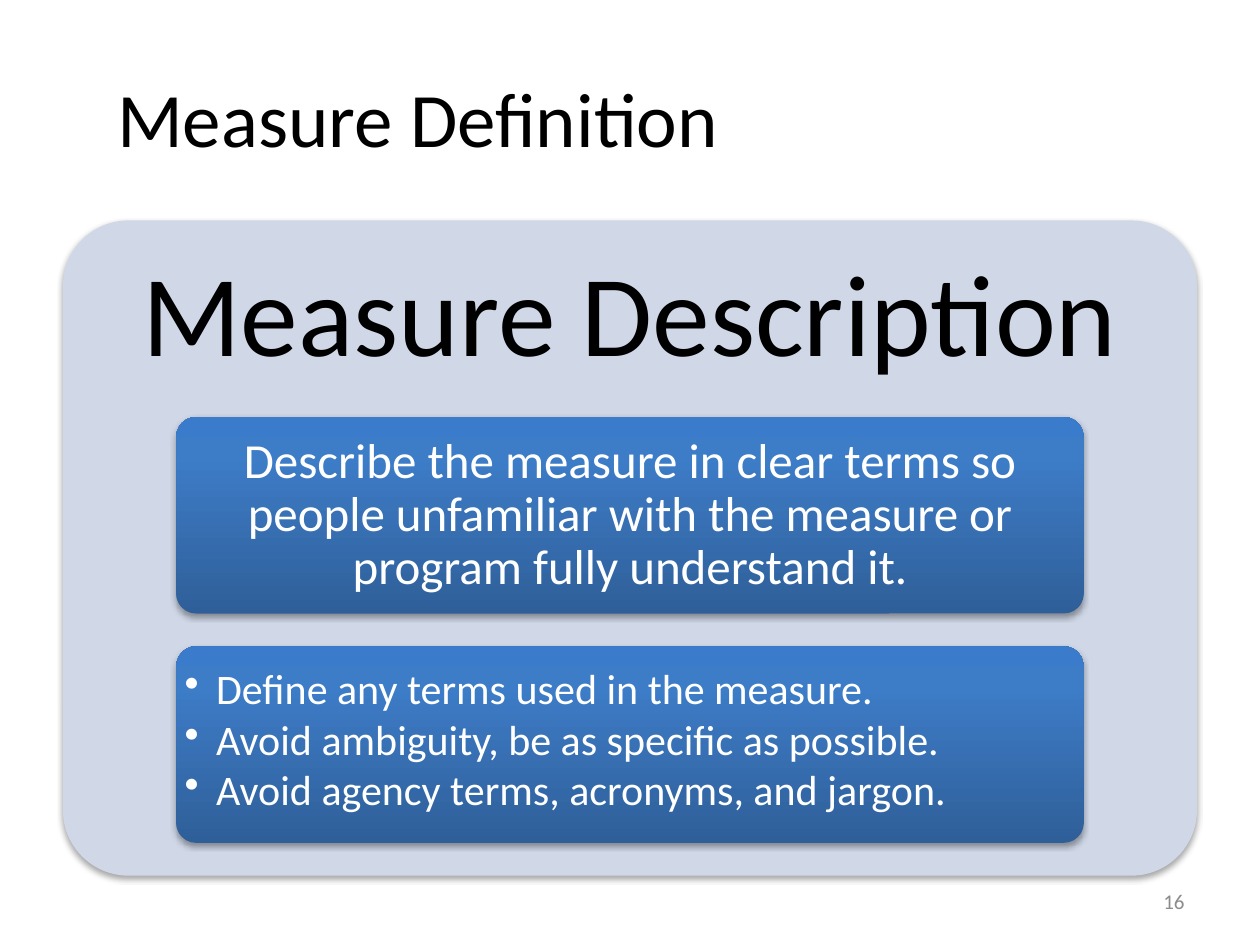
from dataclasses import dataclass

import pptx
import pptx.dml.color
import pptx.enum.shapes
import pptx.enum.text
import pptx.oxml
import pptx.oxml.ns
import pptx.util
from lxml import etree

Inches = pptx.util.Inches
Pt = pptx.util.Pt
ALIGN = pptx.enum.text.PP_ALIGN
ANCHOR = pptx.enum.text.MSO_ANCHOR
NAMESPACE = pptx.oxml.ns.nsdecls("a")


@dataclass(frozen=True)
class Theme:
    font: str = "Calibri"
    ink: str = "000000"
    light: str = "FFFFFF"
    muted: str = "8C8C8C"
    panel: str = "D0D8E8"
    card_stops: tuple = ((0, "2F5F99"), (80, "3D7CC7"), (100, "3A7CCB"))
    title_size: int = 44
    heading_size: int = 66
    card_size: int = 28
    bullet_size: int = 24
    number_size: int = 12


@dataclass(frozen=True)
class Box:
    left: float
    top: float
    width: float
    height: float

    def share(self, x, y, width, height):
        """Box inside this one, given as shares of its size."""
        return Box(self.left + x * self.width, self.top + y * self.height,
                   width * self.width, height * self.height)

    def lengths(self):
        return [Inches(value) for value in
                (self.left, self.top, self.width, self.height)]


THEME = Theme()
SLIDE = Box(0, 0, 10, 7.5)


def write(text_frame, lines, size, color, align=ALIGN.LEFT, anchor=ANCHOR.MIDDLE,
          insets=(0.1, 0.05, 0.1, 0.05), line_spacing=1.0, space_after=0,
          bullet_indent=0):
    text_frame.word_wrap = True
    text_frame.auto_size = pptx.enum.text.MSO_AUTO_SIZE.NONE
    text_frame.vertical_anchor = anchor
    (text_frame.margin_left, text_frame.margin_top,
     text_frame.margin_right, text_frame.margin_bottom) = map(Inches, insets)
    text_frame.text = "\n".join(lines)
    for paragraph in text_frame.paragraphs:
        paragraph.alignment = align
        paragraph.line_spacing = line_spacing
        paragraph.space_after = Pt(space_after)
        if bullet_indent:
            properties = paragraph._p.get_or_add_pPr()
            properties.set("marL", str(Inches(bullet_indent)))
            properties.set("indent", str(-Inches(bullet_indent)))
            etree.SubElement(properties, pptx.oxml.ns.qn("a:buChar"), char="•")
        for run in paragraph.runs:
            run.font.name = THEME.font
            run.font.size = Pt(size)
            run.font.color.rgb = pptx.dml.color.RGBColor.from_string(color)


def add_text(slide, box, lines, size, color, **options):
    text_box = slide.shapes.add_textbox(*box.lengths())
    write(text_box.text_frame, lines, size, color, **options)


def add_rounded(slide, box):
    """Borderless rounded rectangle with a soft shadow below it."""
    shape = slide.shapes.add_shape(
        pptx.enum.shapes.MSO_SHAPE.ROUNDED_RECTANGLE, *box.lengths())
    shape.adjustments[0] = 0.1
    shape.line.fill.background()
    shape.shadow.inherit = False
    effects = shape._element.spPr.find(pptx.oxml.ns.qn("a:effectLst"))
    effects.append(pptx.oxml.parse_xml(
        f'<a:outerShdw {NAMESPACE} blurRad="{Pt(3.1)}" dist="{Pt(1.8)}" '
        'dir="5400000" rotWithShape="0"><a:srgbClr val="000000">'
        '<a:alpha val="35000"/></a:srgbClr></a:outerShdw>'))
    return shape


def add_card(slide, box, lines, size, **options):
    card = add_rounded(slide, box)
    card.fill.gradient()
    card.fill.gradient_angle = 90
    stops = card._element.spPr.find(".//" + pptx.oxml.ns.qn("a:gsLst"))
    stops[:] = [pptx.oxml.parse_xml(
        f'<a:gs {NAMESPACE} pos="{position * 1000}">'
        f'<a:srgbClr val="{color}"/></a:gs>')
        for position, color in THEME.card_stops]
    write(card.text_frame, lines, size, THEME.light, line_spacing=0.9, **options)


def add_title(slide, box, text):
    title = slide.shapes.title
    title.left, title.top, title.width, title.height = box.lengths()
    write(title.text_frame, [text], THEME.title_size, THEME.ink)


def add_description_panel(slide, box):
    panel = add_rounded(slide, box)
    panel.fill.solid()
    panel.fill.fore_color.rgb = pptx.dml.color.RGBColor.from_string(THEME.panel)
    add_text(slide, box.share(0, 0, 1, 0.3), ["Measure Description"],
             THEME.heading_size, THEME.ink, align=ALIGN.CENTER,
             insets=(0.28,) * 4, line_spacing=0.9)

    summary, advice = (box.share(0.1, y, 0.8, 0.3) for y in (0.3, 0.65))
    add_card(slide, summary,
             ["Describe the measure in clear terms so people unfamiliar with "
              "the measure or program fully understand it."],
             THEME.card_size, align=ALIGN.CENTER, insets=(0.08, 0.06, 0.08, 0.06))
    add_card(slide, advice,
             ["Define any terms used in the measure.",
              "Avoid ambiguity, be as specific as possible.",
              "Avoid agency terms, acronyms, and jargon."],
             THEME.bullet_size, anchor=ANCHOR.TOP, insets=(0.02, 0.13, 0.02, 0.01),
             space_after=3, bullet_indent=0.25)


def main():
    presentation = pptx.Presentation()
    presentation.slide_width = Inches(SLIDE.width)
    presentation.slide_height = Inches(SLIDE.height)
    slide = presentation.slides.add_slide(presentation.slide_layouts[5])
    add_title(slide, Box(0.83, 0.3, 8.67, 1.25), "Measure Definition")
    add_description_panel(slide, Box(0.5, 1.75, 9, 5.2))
    add_text(slide, Box(7.17, 6.95, 2.33, 0.4), ["16"],
             THEME.number_size, THEME.muted, align=ALIGN.RIGHT)
    presentation.save("out.pptx")


if __name__ == "__main__":
    main()
